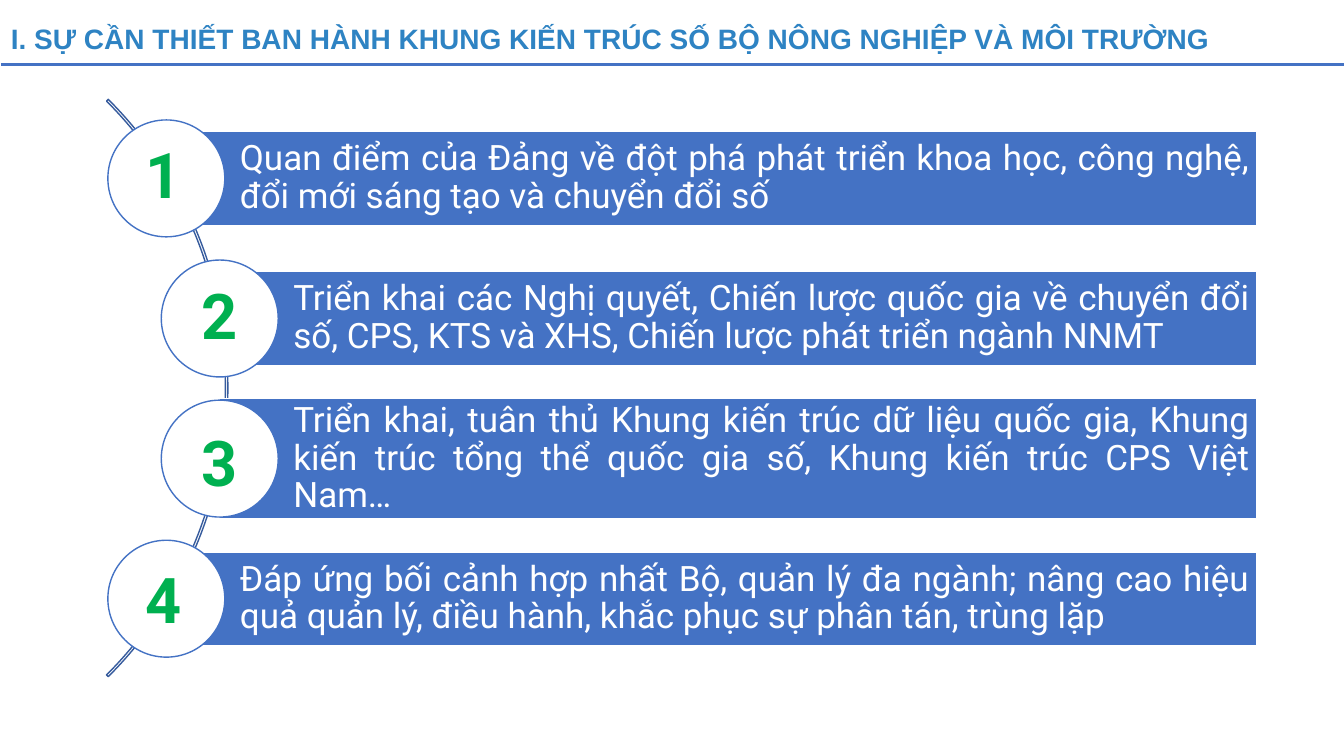
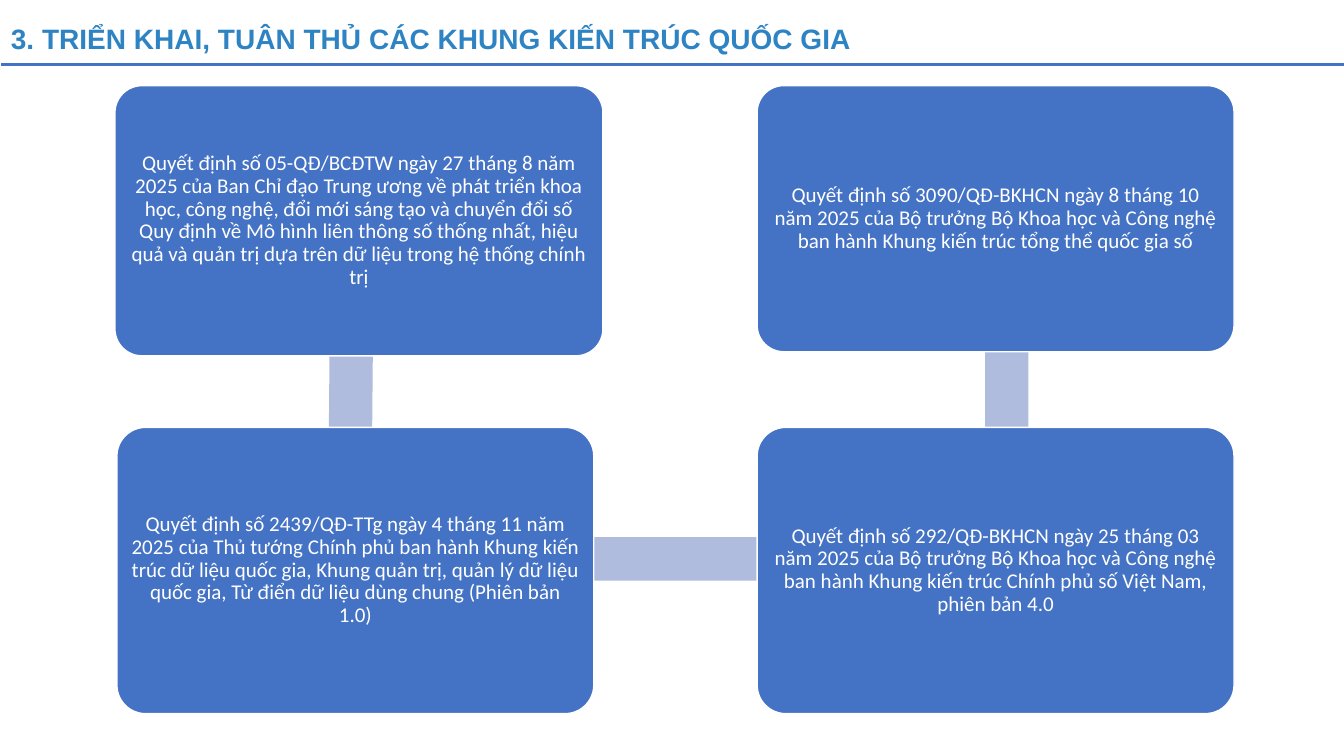
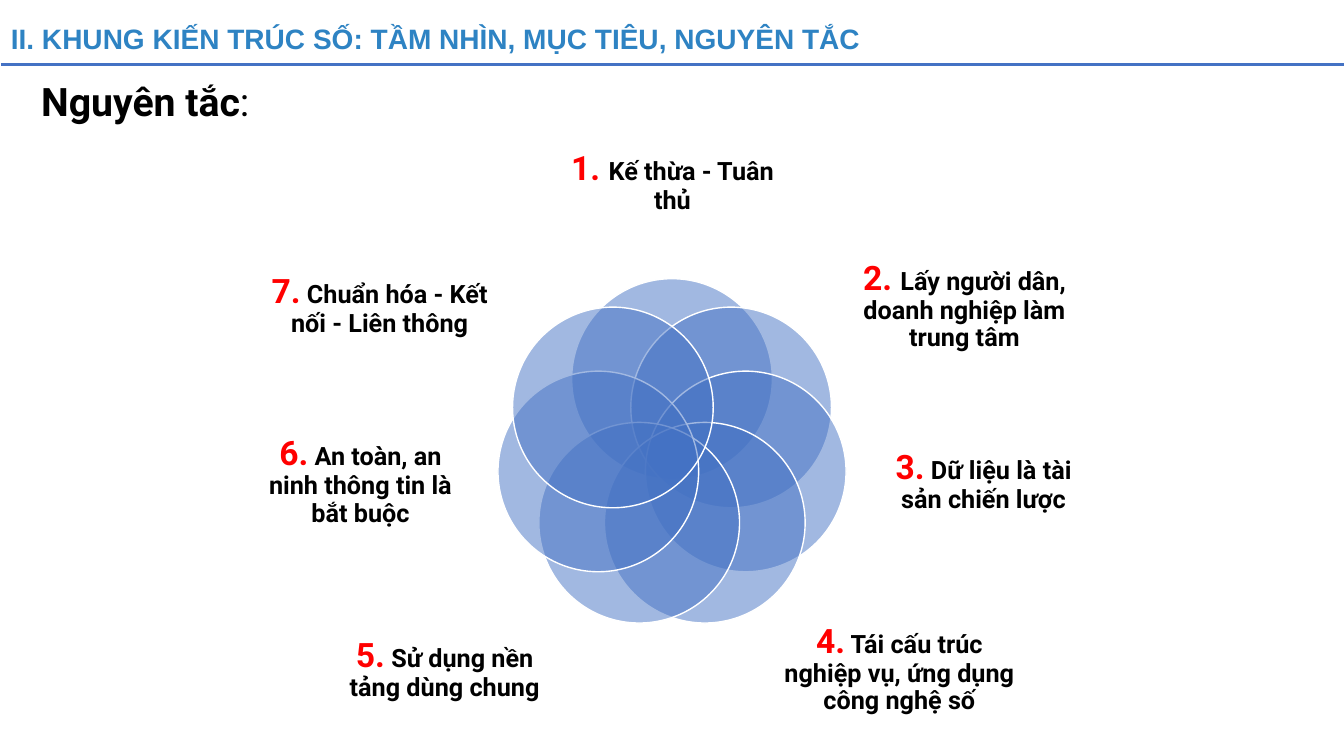
"""Build three slides on a ministry's digital architecture framework."""
from math import cos, pi, sin

from pptx import Presentation
from pptx.dml.color import RGBColor
from pptx.enum import shapes, text
from pptx.oxml.ns import qn
from pptx.util import Inches, Pt

BLUE = RGBColor(0x44, 0x72, 0xC4)
DARK_BLUE = RGBColor(0x36, 0x5B, 0x9D)
TITLE_BLUE = RGBColor(0x2E, 0x83, 0xC3)
PALE_BLUE = RGBColor(0xB0, 0xBC, 0xDE)
GREEN = RGBColor(0x00, 0xB0, 0x50)
RED = RGBColor(0xFF, 0x00, 0x00)
WHITE = RGBColor(0xFF, 0xFF, 0xFF)
BLACK = RGBColor(0x00, 0x00, 0x00)

SHAPE = shapes.MSO_SHAPE
ALIGN = text.PP_ALIGN
MIDDLE = text.MSO_ANCHOR.MIDDLE
GROW = text.MSO_AUTO_SIZE.SHAPE_TO_FIT_TEXT

WIDTH, HEIGHT = 13.33, 7.5

TITLE_FONT = dict(name="Arial", size=20, bold=True, color=TITLE_BLUE)
BAR_FONT = dict(name="Roboto", size=25, color=WHITE)
NUMBER_FONT = dict(name="Roboto", size=45, bold=True, color=GREEN)
CARD_FONT = dict(name="Calibri", size=15, color=WHITE)
HEADING_FONT = dict(name="Roboto", size=28, bold=True, color=BLACK)
COLON_FONT = dict(HEADING_FONT, bold=False)
INDEX_FONT = dict(name="Roboto", size=24, bold=True, color=RED)
LABEL_FONT = dict(name="Roboto", size=18, bold=True, color=BLACK)

REASONS_TITLE = "I. SỰ CẦN THIẾT BAN HÀNH KHUNG KIẾN TRÚC SỐ BỘ NÔNG NGHIỆP VÀ MÔI TRƯỜNG"
REASONS = [
    ("Quan điểm của Đảng về đột phá phát triển khoa học, công nghệ, đổi mới sáng tạo "
     "và chuyển đổi số", 1.07, 0.93, (1.34, 1.3)),
    ("Triển khai các Nghị quyết, Chiến lược quốc gia về chuyển đổi số, CPS, KTS và XHS, "
     "Chiến lược phát triển ngành NNMT", 1.6, 0.93, (1.9, 2.69)),
    ("Triển khai, tuân thủ Khung kiến trúc dữ liệu quốc gia, Khung kiến trúc tổng thể "
     "quốc gia số, Khung kiến trúc CPS Việt Nam…", 1.6, 1.19, (1.9, 4.15)),
    ("Đáp ứng bối cảnh hợp nhất Bộ, quản lý đa ngành; nâng cao hiệu quả quản lý, "
     "điều hành, khắc phục sự phân tán, trùng lặp", 1.07, 0.93, (1.34, 5.51)),
]
CIRCLE, FIRST_TOP, PITCH, BAR_RIGHT = 1.16, 1.19, 1.39, 12.46

DECISIONS_TITLE = "3. TRIỂN KHAI, TUÂN THỦ CÁC KHUNG KIẾN TRÚC QUỐC GIA"
DECISIONS = [
    ("Quyết định số 05-QĐ/BCĐTW ngày 27 tháng 8 năm 2025 của Ban Chỉ đạo Trung ương về "
     "phát triển khoa học, công nghệ, đổi mới sáng tạo và chuyển đổi số Quy định về Mô hình "
     "liên thông số thống nhất, hiệu quả và quản trị dựa trên dữ liệu trong hệ thống chính trị",
     (1.14, 0.85, 4.84, 2.68)),
    ("Quyết định số 2439/QĐ-TTg ngày 4 tháng 11 năm 2025 của Thủ tướng Chính phủ ban hành "
     "Khung kiến trúc dữ liệu quốc gia, Khung quản trị, quản lý dữ liệu quốc gia, Từ điển "
     "dữ liệu dùng chung (Phiên bản 1.0)", (1.16, 4.24, 4.73, 2.84)),
    ("Quyết định số 292/QĐ-BKHCN ngày 25 tháng 03 năm 2025 của Bộ trưởng Bộ Khoa học và "
     "Công nghệ ban hành Khung kiến trúc Chính phủ số Việt Nam, phiên bản 4.0",
     (7.51, 4.24, 4.73, 2.84)),
    ("Quyết định số 3090/QĐ-BKHCN ngày 8 tháng 10 năm 2025 của Bộ trưởng Bộ Khoa học và "
     "Công nghệ ban hành Khung kiến trúc tổng thể quốc gia số", (7.51, 0.85, 4.73, 2.64)),
]
LINKS = [((1.76, 3.03, 3.45, 0.43), 90.5),
         ((2.09, 5.33, 6.33, 0.43), 0),
         ((8.25, 3.08, 3.47, 0.43), 270)]

PRINCIPLES_TITLE = "II. KHUNG KIẾN TRÚC SỐ: TẦM NHÌN, MỤC TIÊU, NGUYÊN TẮC"
PRINCIPLES = [
    ("1. ", "Kế thừa - Tuân thủ"),
    ("2. ", "Lấy người dân, doanh nghiệp làm trung tâm"),
    ("3.", " Dữ liệu là tài sản chiến lược"),
    ("4.", " Tái cấu trúc nghiệp vụ, ứng dụng công nghệ số"),
    ("5.", " Sử dụng nền tảng dùng chung"),
    ("6.", " An toàn, an ninh thông tin là bắt buộc"),
    ("7.", " Chuẩn hóa - Kết nối - Liên thông"),
]
TOP_LABEL = (5.53, 1.21, 2.28, 1.22)
RIGHT_LABELS = [(8.49, 2.37, 2.15, 1.34), (8.7, 4.07, 2.11, 1.43), (7.78, 5.99, 2.28, 1.31)]
PETAL, RING_RADIUS, RING_Y = 1.99, 0.75, 4.51


def inches(box):
    return [Inches(v) for v in box]


def write(sp, runs, margins=None, align=None, spacing=None, **frame):
    """Fill a shape with one paragraph of (text, font) runs."""
    tf = sp.text_frame
    for key, value in {"word_wrap": True, **frame}.items():
        setattr(tf, key, value)
    for side, value in zip(("left", "top", "right", "bottom"), margins or ()):
        setattr(tf, f"margin_{side}", Inches(value))
    p = tf.paragraphs[0]
    p.alignment, p.line_spacing = align, spacing
    for words, font in runs:
        r = p.add_run()
        r.text = words
        for key, value in font.items():
            if key == "color":
                r.font.color.rgb = value
            else:
                setattr(r.font, key, Pt(value) if key == "size" else value)


def add_text(slide, box, runs, **layout):
    write(slide.shapes.add_textbox(*inches(box)), runs, **layout)


def add_shape(slide, kind, box, fill=None, line=None, adjust=(), rotation=0):
    sp = slide.shapes.add_shape(kind, *inches(box))
    sp.shadow.inherit = False
    sp.rotation = rotation
    for i, value in enumerate(adjust):
        sp.adjustments[i] = value
    for part, color in ((sp.fill, fill), (sp.line.fill, line)):
        if color is None:
            part.background()
        else:
            part.solid()
            part.fore_color.rgb = color
    if line is not None:
        sp.line.width = Pt(1)
    return sp


def add_slide(prs, title):
    slide = prs.slides.add_slide(prs.slide_layouts[6])
    add_text(slide, (0.01, 0.2, 13.31, 0.4), [(title, TITLE_FONT)],
             spacing=0.9, vertical_anchor=MIDDLE, auto_size=GROW)
    rule = slide.shapes.add_connector(
        shapes.MSO_CONNECTOR.STRAIGHT, *inches((0.01, 0.64, WIDTH, 0.64)))
    rule.line.color.rgb = BLUE
    rule.line.width = Pt(1.5)
    sp_pr = rule._element.spPr
    sp_pr.append(sp_pr.makeelement(qn("a:effectLst"), {}))
    return slide


def build_reasons(prs):
    slide = add_slide(prs, REASONS_TITLE)
    add_shape(slide, SHAPE.BLOCK_ARC, (-5.84, -0.2, 8.1, 8.1), line=DARK_BLUE,
              adjust=(189, 27, 0.003))
    for i, (words, left, height, number_at) in enumerate(REASONS):
        top = FIRST_TOP + i * PITCH
        bar_left, middle = left + CIRCLE / 2, top + CIRCLE / 2
        bar = add_shape(slide, SHAPE.RECTANGLE,
                        (bar_left, middle - height / 2, BAR_RIGHT - bar_left, height), BLUE, WHITE)
        write(bar, [(words, BAR_FONT)], margins=(0.73, 0.07, 0.07, 0.07),
              align=ALIGN.JUSTIFY, spacing=0.9, vertical_anchor=MIDDLE)
        add_shape(slide, SHAPE.OVAL, (left, top, CIRCLE, CIRCLE), WHITE, BLUE)
        add_text(slide, (*number_at, 0.55, 0.86), [(str(i + 1), NUMBER_FONT)],
                 word_wrap=False, auto_size=GROW)


def build_decisions(prs):
    slide = add_slide(prs, DECISIONS_TITLE)
    for box, rotation in LINKS:
        add_shape(slide, SHAPE.RECTANGLE, box, PALE_BLUE, rotation=rotation)
    for words, box in DECISIONS:
        card = add_shape(slide, SHAPE.ROUNDED_RECTANGLE, box, BLUE, WHITE, adjust=(0.1,))
        write(card, [(words, CARD_FONT)], margins=(0.06,) * 4,
              align=ALIGN.CENTER, spacing=0.9, vertical_anchor=MIDDLE)


def build_principles(prs):
    slide = add_slide(prs, PRINCIPLES_TITLE)
    add_text(slide, (0.31, 0.72, 11.47, 0.57),
             [("Nguyên tắc", HEADING_FONT), (":", COLON_FONT)], auto_size=GROW)
    left_labels = [(WIDTH - x - w, y, w, h) for x, y, w, h in reversed(RIGHT_LABELS)]
    boxes = [TOP_LABEL, *RIGHT_LABELS, *left_labels]
    for i, ((index, words), box) in enumerate(zip(PRINCIPLES, boxes)):
        angle = 2 * pi * i / len(PRINCIPLES)
        x = WIDTH / 2 + RING_RADIUS * sin(angle) - PETAL / 2
        y = RING_Y - RING_RADIUS * cos(angle) - PETAL / 2
        petal = add_shape(slide, SHAPE.OVAL, (x, y, PETAL, PETAL), BLUE, WHITE)
        color = petal._element.spPr.find(qn("a:solidFill"))[0]
        color.append(color.makeelement(qn("a:alpha"), {"val": "50000"}))
        add_text(slide, box, [(index, INDEX_FONT), (words, LABEL_FONT)], margins=(0,) * 4,
                 align=ALIGN.CENTER, spacing=0.9, vertical_anchor=MIDDLE)


def main():
    prs = Presentation()
    prs.slide_width, prs.slide_height = Inches(WIDTH), Inches(HEIGHT)
    for build in (build_reasons, build_decisions, build_principles):
        build(prs)
    prs.save("out.pptx")


if __name__ == "__main__":
    main()
